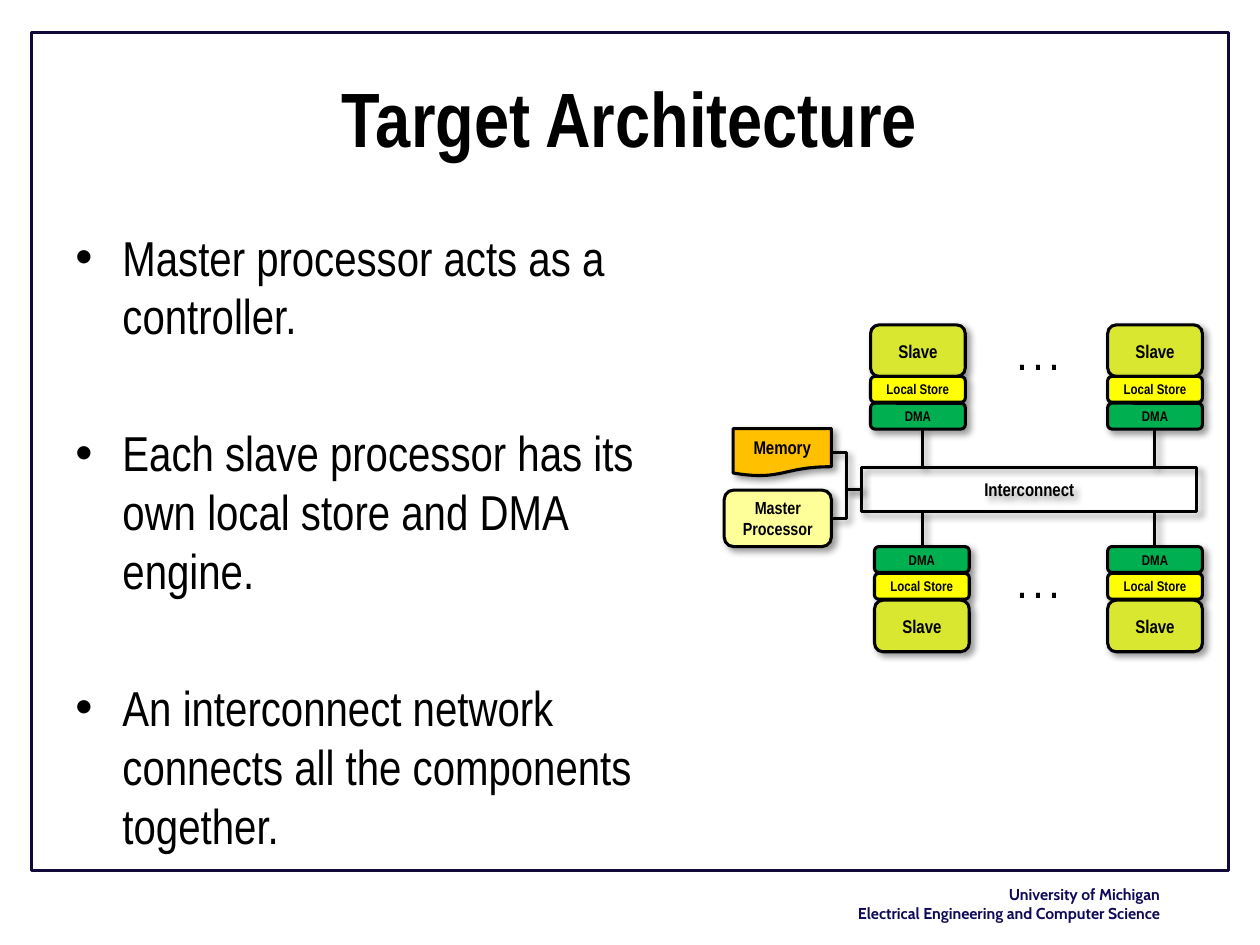
from lxml.etree import SubElement
from pptx import Presentation
from pptx.dml.color import RGBColor
from pptx.enum.shapes import MSO_CONNECTOR as CONNECTOR, MSO_SHAPE as SHAPE
from pptx.enum.text import MSO_ANCHOR as ANCHOR, PP_ALIGN as ALIGN
from pptx.oxml.ns import qn
from pptx.util import Cm, Pt

BLACK = RGBColor(0x00, 0x00, 0x00)
FRAME = RGBColor(0x10, 0x09, 0x3A)
NAVY = RGBColor(0x0F, 0x09, 0x58)
LIME = RGBColor(0xDA, 0xE7, 0x31)
YELLOW = RGBColor(0xFF, 0xFF, 0x00)
GREEN = RGBColor(0x00, 0xB0, 0x50)
CREAM = RGBColor(0xFF, 0xFF, 0x99)
ORANGE = RGBColor(0xFF, 0xC0, 0x00)


def write(shape, text, size=10.5, bold=True, color=BLACK, font="Arial Narrow",
          align=ALIGN.CENTER, anchor=ANCHOR.MIDDLE, margins=(0.25, 0.13),
          bullet=None, gap=0):
    frame = shape.text_frame
    frame.word_wrap = True
    frame.vertical_anchor = anchor
    frame.margin_left = frame.margin_right = Cm(margins[0])
    frame.margin_top = frame.margin_bottom = Cm(margins[1])
    frame.text = text
    for index, paragraph in enumerate(frame.paragraphs):
        paragraph.alignment = align
        paragraph.space_before = Pt(gap if index else 0)
        if bullet:
            properties = paragraph._p.get_or_add_pPr()
            properties.set("marL", str(Cm(0.95)))
            properties.set("indent", str(-Cm(0.95)))
            SubElement(properties, qn("a:buFont"), typeface="Arial")
            SubElement(properties, qn("a:buChar"), char=bullet)
        for run in paragraph.runs:
            run.font.name = font
            run.font.size = Pt(size)
            run.font.bold = bold
            run.font.color.rgb = color


def outline_with_shadow(shape):
    shape.line.color.rgb = BLACK
    shape.line.width = Pt(1.75)
    effects = SubElement(shape._element.spPr, qn("a:effectLst"))
    shadow = SubElement(effects, qn("a:outerShdw"), blurRad=str(Pt(4)),
                        dist=str(Pt(3)), dir="2700000", algn="tl", rotWithShape="0")
    color = SubElement(shadow, qn("a:srgbClr"), val="000000")
    SubElement(color, qn("a:alpha"), val="40000")


presentation = Presentation()
presentation.slide_width = Cm(25.4)
presentation.slide_height = Cm(19.05)
slide = presentation.slides.add_slide(presentation.slide_layouts[5])
shapes = slide.shapes

frame = shapes.add_shape(SHAPE.RECTANGLE, Cm(0.64), Cm(0.66), Cm(24.13), Cm(16.89))
frame.shadow.inherit = False
frame.fill.background()
frame.line.color.rgb = FRAME
frame.line.width = Pt(1.5)

title = shapes.title
title.left, title.top, title.width, title.height = Cm(1.27), Cm(0.76), Cm(22.86), Cm(3.18)
write(title, "Target Architecture", size=44)

footer = shapes.add_textbox(Cm(15.88), Cm(17.7), Cm(7.75), Cm(1.02))
write(footer, "University of Michigan\nElectrical Engineering and Computer Science",
      size=9, color=NAVY, font="Cabin", align=ALIGN.RIGHT, anchor=ANCHOR.TOP)

body = shapes.add_textbox(Cm(1.27), Cm(4.45), Cm(12.9), Cm(12.57))
write(body, "Master processor acts as a controller.\n"
      "Each slave processor has its own local store and DMA engine.\n"
      "An interconnect network connects all the components together.",
      size=28, bold=False, align=ALIGN.LEFT, anchor=ANCHOR.TOP, bullet="•", gap=44.6)

for x in (18.59, 23.28):
    for top, bottom in ((8.66, 9.42), (10.31, 11.02)):
        link = shapes.add_connector(CONNECTOR.STRAIGHT, Cm(x), Cm(top), Cm(x), Cm(bottom))
        outline_with_shadow(link)

slave = ("Slave", LIME, 10.5, 1.04, 1.04)
local_store = ("Local Store", YELLOW, 8, 0.52, 0.54)
dma = ("DMA", GREEN, 8, 0.52, 0.54)
upper = (slave, local_store, dma)
lower = upper[::-1]

boxes = [
    ("Master Processor", SHAPE.FLOWCHART_ALTERNATE_PROCESS, CREAM, 10, 14.6, 9.88, 2.16, 1.14),
    ("Memory", SHAPE.FLOWCHART_DOCUMENT, ORANGE, 10.5, 14.78, 8.64, 1.98, 0.96),
    ("Interconnect", SHAPE.FLOWCHART_PROCESS, None, 10.5, 17.37, 9.42, 6.76, 0.89),
]
for left, top, stack in ((17.55, 6.55, upper), (22.33, 6.55, upper),
                         (17.63, 11.02, lower), (22.33, 11.02, lower)):
    for text, fill, size, height, step in stack:
        boxes.append((text, SHAPE.FLOWCHART_ALTERNATE_PROCESS, fill, size,
                      left, top, 1.91, height))
        top += step

parts = {}
for text, kind, fill, size, left, top, width, height in boxes:
    box = shapes.add_shape(kind, Cm(left), Cm(top), Cm(width), Cm(height))
    if fill is None:
        box.fill.background()
    else:
        box.fill.solid()
        box.fill.fore_color.rgb = fill
    outline_with_shadow(box)
    write(box, text, size=size, margins=(0.1, 0))
    parts[text] = box

for name in ("Master Processor", "Memory"):
    link = shapes.add_connector(CONNECTOR.ELBOW, 0, 0, 0, 0)
    link.begin_connect(parts["Interconnect"], 1)
    link.end_connect(parts[name], 3)
    outline_with_shadow(link)

for top in (6.63, 11.23):
    dots = shapes.add_textbox(Cm(19.89), Cm(top), Cm(2.08), Cm(1.12))
    write(dots, ". . .", size=20)

presentation.save("out.pptx")
